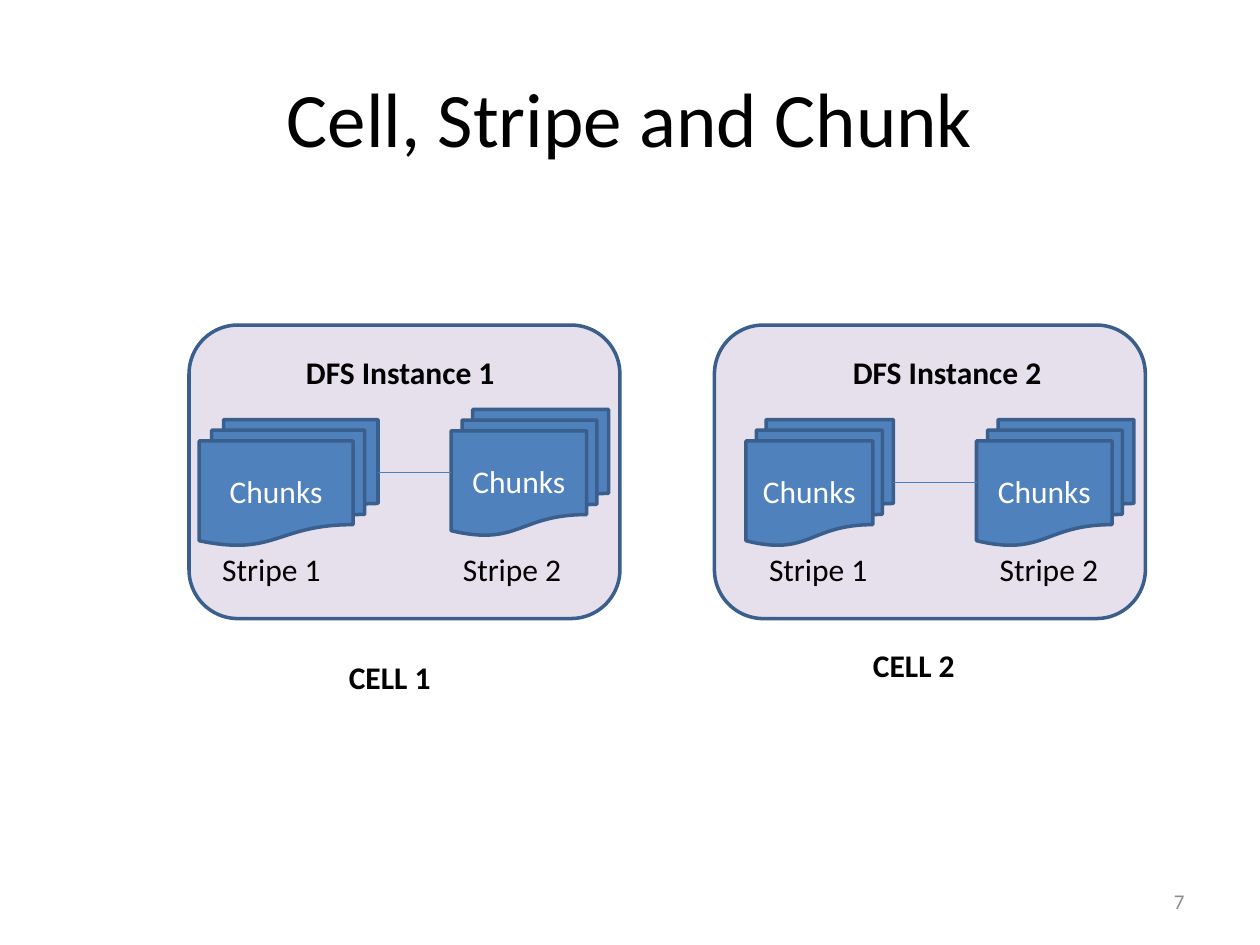
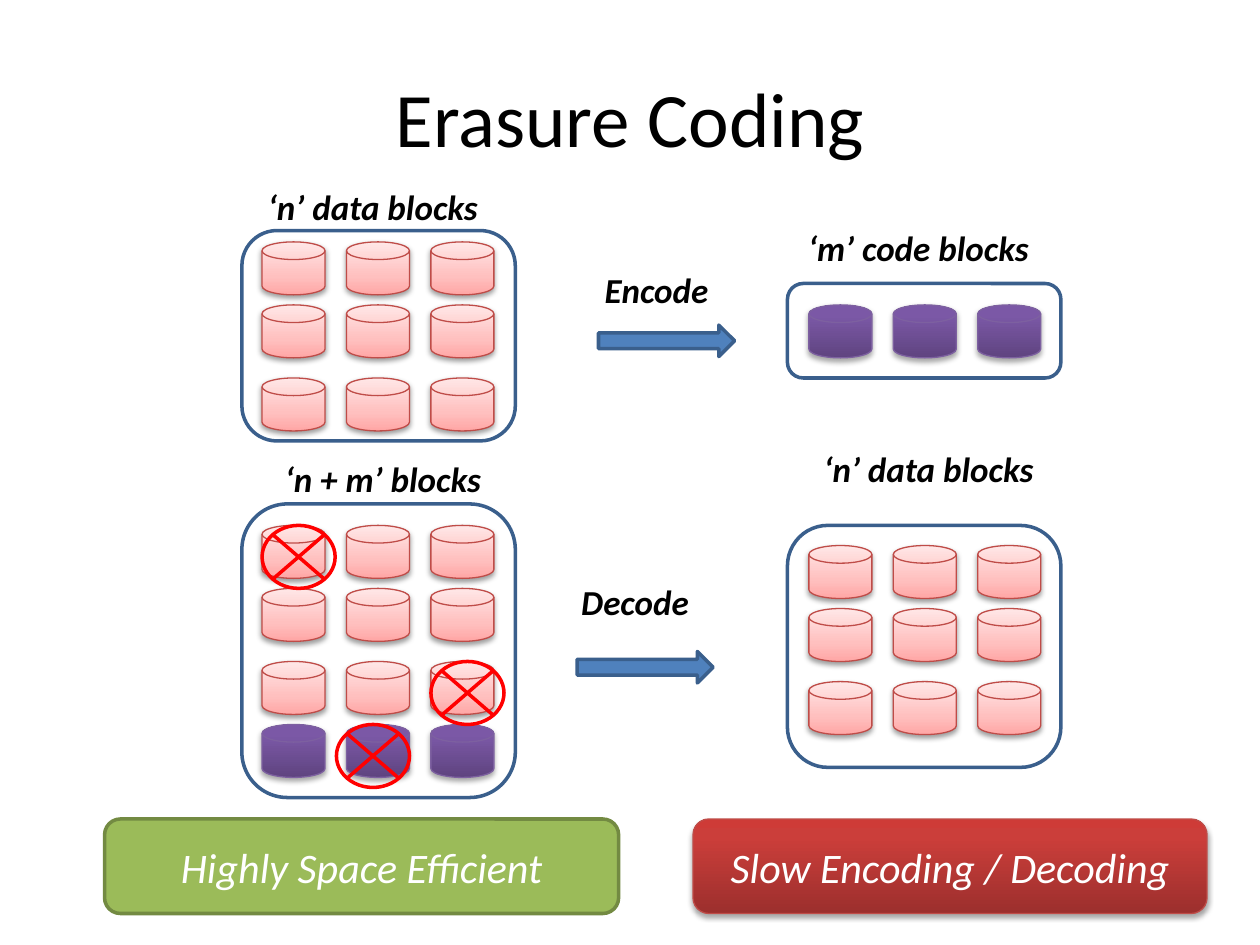
import pptx
import pptx.util
import pptx.dml.color
import pptx.enum.shapes
import pptx.enum.text
import pptx.oxml.ns
import lxml.etree

Inches = pptx.util.Inches
Shape = pptx.enum.shapes.MSO_SHAPE
Align = pptx.enum.text.PP_ALIGN
Anchor = pptx.enum.text.MSO_ANCHOR
qn = pptx.oxml.ns.qn

FONT = "Calibri"
HUES = {
    "black": "000000",
    "white": "FFFFFF",
    "gray": "8C8C8C",
    "blue": "4F81BD",
    "navy": "3A5F8C",
    "link": "4B7EBC",
    "lilac": "E6E0EC",
    "green": "9BBB59",
    "olive": "738A42",
    "red": "FF0000",
    "brick": "BF4C48",
    "purple": "7D60A0",
}
LOOKS = {
    "data": {"stops": [(0, "FFA6A5"), (35, "FFC0BF"), (100, "FFE7E7")],
             "edge": "brick", "alpha": 38, "drop": 1.6},
    "code": {"stops": [(0, "5F4480"), (80, "7B58A6"), (100, "7C57A8")],
             "edge": "purple", "alpha": 35, "drop": 1.8},
    "slow": {"stops": [(0, "9C2F2D"), (80, "CB3E3A"), (100, "CE3B37")],
             "edge": "brick", "alpha": 35, "drop": 1.8},
}
ROWS = (0, 0.5, 1.08)
STEP = 0.67


def color(name):
    return pptx.dml.color.RGBColor.from_string(HUES[name])


def box(left, top, width, height):
    return [Inches(v) for v in (left, top, width, height)]


def write(frame, words, size=18, hue="black", bold=False, slant=False,
          align=Align.CENTER, anchor=Anchor.MIDDLE, wrap=True):
    frame.word_wrap = wrap
    frame.vertical_anchor = anchor
    line = frame.paragraphs[0]
    line.alignment = align
    run = line.add_run()
    run.text = words
    font = run.font
    font.name, font.size = FONT, pptx.util.Pt(size)
    font.bold, font.italic = bold, slant
    font.color.rgb = color(hue)


def label(slide, words, at, anchor=Anchor.TOP, **style):
    write(slide.shapes.add_textbox(*box(*at)).text_frame, words,
          anchor=anchor, **style)


def draw(shapes, kind, at, fill=None, edge="navy", weight=2):
    shape = shapes.add_shape(kind, *box(*at))
    shape.shadow.inherit = False
    if fill:
        shape.fill.solid()
        shape.fill.fore_color.rgb = color(fill)
    else:
        shape.fill.background()
    shape.line.color.rgb = color(edge)
    shape.line.width = pptx.util.Pt(weight)
    return shape


def node(root, tag, **attrs):
    return lxml.etree.SubElement(root, qn("a:" + tag),
                                 {key: str(val) for key, val in attrs.items()})


def glossy(shapes, kind, at, look):
    shape = draw(shapes, kind, at, edge=look["edge"], weight=0.75)
    shape.fill.gradient()
    shape.fill.gradient_angle = 90
    props = shape._element.spPr
    stops = props.find(qn("a:gradFill")).find(qn("a:gsLst"))
    for old in list(stops):
        stops.remove(old)
    for place, hue in look["stops"]:
        node(node(stops, "gs", pos=place * 1000), "srgbClr", val=hue)
    shade = node(props.find(qn("a:effectLst")), "outerShdw",
                 blurRad=pptx.util.Pt(3.1), dist=pptx.util.Pt(look["drop"]),
                 dir=5400000, rotWithShape=0)
    node(node(shade, "srgbClr", val=HUES["black"]), "alpha",
         val=look["alpha"] * 1000)
    return shape


def disks(slide, left, top, look, rows=ROWS):
    group = slide.shapes.add_group_shape()
    for row in rows:
        for col in range(3):
            at = (left + col * STEP, top + row, 0.5, 0.42)
            glossy(group.shapes, Shape.FLOWCHART_MAGNETIC_DISK, at, LOOKS[look])


def chunks(slide, at):
    stack = draw(slide.shapes, Shape.FLOWCHART_MULTIDOCUMENT, at, fill="blue")
    write(stack.text_frame, "Chunks", hue="white")
    return stack


def join(slide, start, end, first=None, last=None):
    line = slide.shapes.add_connector(
        pptx.enum.shapes.MSO_CONNECTOR.STRAIGHT,
        *[Inches(v) for v in (*start, *end)])
    if first:
        line.begin_connect(first, 3)
    if last:
        line.end_connect(last, 1)
    line.line.color.rgb = color("link")
    line.line.width = pptx.util.Pt(0.75)
    node(line._element.spPr, "effectLst")


def cell(slide, left, inset, tab):
    shape = draw(slide.shapes, Shape.FLOWCHART_ALTERNATE_PROCESS,
                 (left, 2.58, 3.42, 2.33), fill="lilac")
    frame = shape.text_frame
    write(frame, "Stripe 1\tStripe 2", align=Align.LEFT, anchor=Anchor.BOTTOM)
    frame.margin_left = Inches(inset)
    frame.margin_bottom = Inches(0.13)
    tabs = node(frame.paragraphs[0]._p.get_or_add_pPr(), "tabLst")
    node(tabs, "tab", pos=Inches(tab), algn="l")


def start(deck, title):
    slide = deck.slides.add_slide(deck.slide_layouts[5])
    head = slide.shapes.title
    head.left, head.top, head.width, head.height = box(0.5, 0.3, 9, 1.25)
    write(head.text_frame, title, size=44)
    return slide


def cells(deck):
    slide = start(deck, "Cell, Stripe and Chunk")
    label(slide, "7", (7.17, 6.95, 2.33, 0.4), size=12, hue="gray",
          align=Align.RIGHT, anchor=Anchor.MIDDLE)
    cell(slide, 5.67, 0.32, 1.83)
    cell(slide, 1.5, 0.15, 1.91)
    right = chunks(slide, (3.58, 3.25, 1.25, 1))
    chunks(slide, (1.58, 3.33, 1.42, 1))
    join(slide, (3, 3.75), (3.58, 3.75), last=right)
    right = chunks(slide, (7.75, 3.33, 1.25, 1))
    left = chunks(slide, (5.92, 3.33, 1.17, 1))
    join(slide, (7.09, 3.83), (7.75, 3.83), left, right)
    for words, at in (
        ("CELL 1", (2.67, 5.17, 0.86, 0.4)),
        ("CELL 2", (6.83, 5.08, 0.86, 0.4)),
        ("DFS Instance 1", (2.33, 2.75, 1.71, 0.4)),
        ("DFS Instance 2", (6.67, 2.75, 1.71, 0.4)),
    ):
        label(slide, words, at, bold=True, align=Align.LEFT, wrap=False)


def coding(deck):
    slide = start(deck, "Erasure Coding")
    shapes = slide.shapes
    good = draw(shapes, Shape.ROUNDED_RECTANGLE, (0.83, 6.5, 4.08, 0.75),
                fill="green", edge="olive")
    bad = glossy(shapes, Shape.ROUNDED_RECTANGLE, (5.5, 6.5, 4.08, 0.75),
                 LOOKS["slow"])
    for shape, words in ((good, "Highly Space Efficient"),
                         (bad, "Slow Encoding / Decoding")):
        write(shape.text_frame, words, size=24, hue="white", slant=True)

    disks(slide, 2.08, 1.92, "data")
    disks(slide, 2.08, 5.75, "code", rows=(0,))
    disks(slide, 2.08, 4.17, "data")
    disks(slide, 6.42, 2.42, "code", rows=(0,))
    disks(slide, 6.42, 4.33, "data")
    for left, top in ((4.75, 2.58), (4.58, 5.17)):
        draw(shapes, Shape.RIGHT_ARROW, (left, top, 1.08, 0.25), fill="blue")

    for words, left, top in (
        ("‘n’ data blocks", 1.92, 1.42),
        ("Decode", 4, 4.56),
        ("Encode", 4.17, 2.08),
        ("‘n + m’ blocks", 2, 3.58),
        ("‘m’ code blocks", 6.25, 1.75),
        ("‘n’ data blocks", 6.33, 3.5),
    ):
        label(slide, words, (left, top, 2.08, 0.44), size=20, bold=True,
              slant=True)
    for left, top, height in ((1.92, 1.83, 1.67), (1.92, 4, 2.33),
                              (6.25, 4.17, 1.92), (6.25, 2.25, 0.75)):
        draw(shapes, Shape.ROUNDED_RECTANGLE, (left, top, 2.17, height))
    for left, top in ((2.08, 4.17), (2.67, 5.75), (3.42, 5.25)):
        draw(shapes, Shape.FLOWCHART_SUMMING_JUNCTION,
             (left, top, 0.58, 0.5), edge="red")


def main():
    deck = pptx.Presentation()
    deck.slide_width, deck.slide_height = Inches(10), Inches(7.5)
    cells(deck)
    coding(deck)
    deck.save("out.pptx")


if __name__ == "__main__":
    main()
